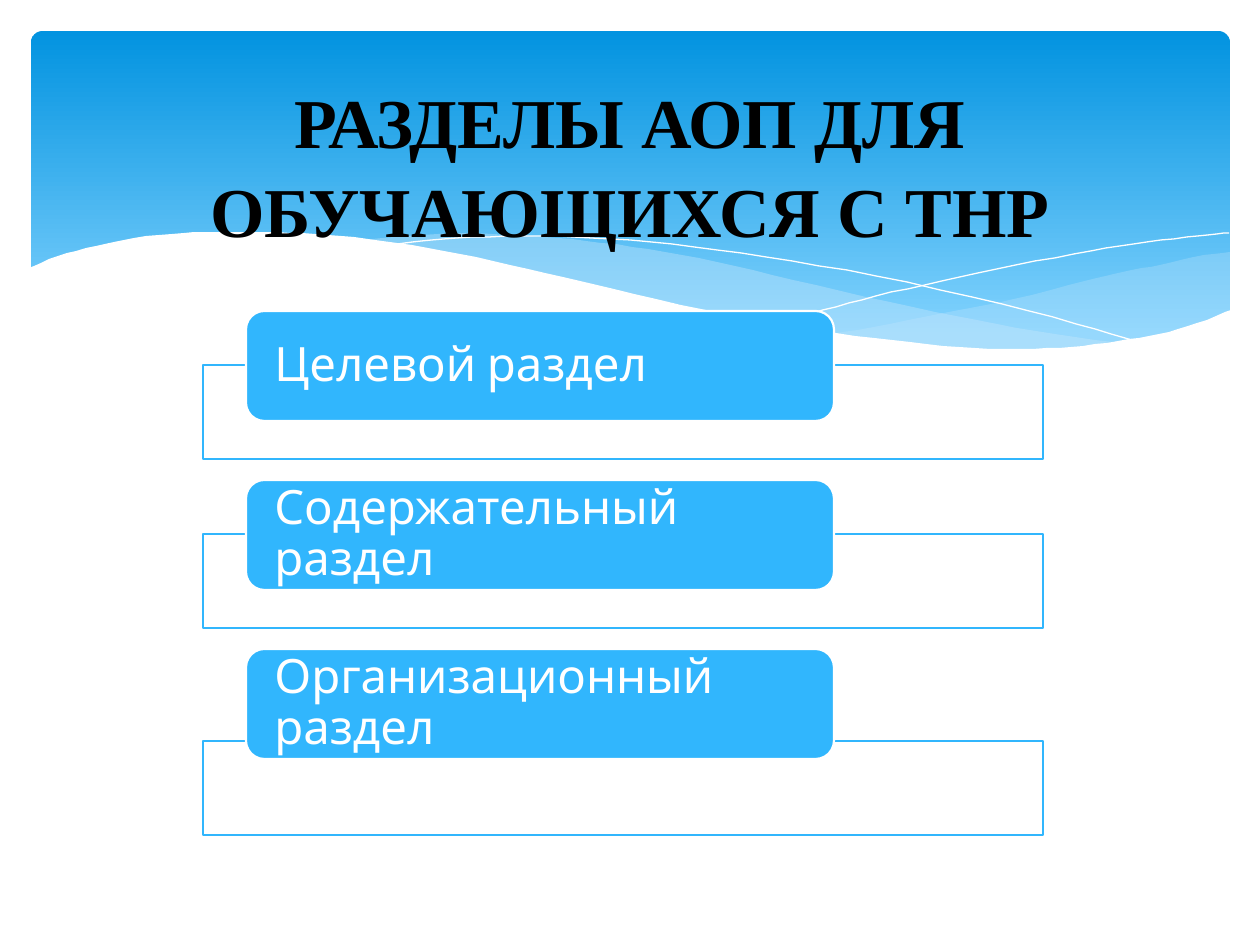
import dataclasses

import pptx
import pptx.dml.color
import pptx.enum.shapes
import pptx.enum.text
import pptx.oxml
import pptx.oxml.ns
import pptx.util

SCALE = 914400 / 126
SHAPES = pptx.enum.shapes.MSO_SHAPE


@dataclasses.dataclass(frozen=True)
class Theme:
    """Colours, fonts and type sizes of the slide."""
    sky_top: str = "0293E0"
    sky_bottom: str = "83D3FE"
    wave: str = "C6E7FC"
    accent: str = "31B6FD"
    white: str = "FFFFFF"
    black: str = "000000"
    title_font: str = "Times New Roman"
    body_font: str = "Cabin"
    title_size: int = 40
    body_size: int = 27
    line_width: float = 1.25


THEME = Theme()

RIGHT_WAVE = [
    [(1230, 252), (1194, 257), (1160, 265), (1123, 272), (1085, 281), (1014, 299),
     (949, 312), (890, 324), (833, 334)],
    [(833, 334), (888, 341), (939, 347), (984, 349), (1026, 350), (1076, 348),
     (1120, 343), (1160, 334), (1196, 324), (1230, 311)],
]
MIDDLE_WAVE = [
    [(1125, 344), (1055, 334), (977, 320), (890, 302), (793, 280), (717, 262), (648, 249),
     (586, 241), (529, 236), (455, 233), (394, 237), (360, 241)],
    [(360, 241), (431, 251), (509, 266), (566, 280), (668, 302), (757, 321), (838, 335),
     (910, 345), (974, 349), (1031, 350), (1080, 349), (1125, 344)],
]
FALLING_LINE = [
    [(389, 246), (413, 242), (457, 238), (524, 236), (591, 238), (672, 244), (766, 257),
     (876, 276), (1002, 304), (1095, 329), (1143, 343)],
]
RISING_LINE = [
    [(772, 324), (823, 310), (876, 296), (942, 281), (1016, 265), (1091, 251),
     (1147, 242), (1198, 236), (1229, 233)],
]
WHITE_WAVE = [
    [(1231, 310), (1197, 323), (1159, 334), (1118, 341), (1071, 347), (1019, 349),
     (959, 347), (892, 340), (816, 330), (730, 315), (634, 294), (563, 277), (493, 261),
     (428, 248), (368, 239), (315, 234), (266, 232), (223, 232), (184, 233), (134, 238),
     (96, 246), (58, 256), (29, 268)],
    [(29, 415), (1231, 415)],
]

SECTIONS = [
    ("Целевой раздел", 365),
    ("Содержательный раздел", 534),
    ("Организационный раздел", 741),
]
CARD_TOP, CARD_PITCH = 311, 169


def px(length):
    """Turn a length in px into EMU."""
    return pptx.util.Emu(round(length * SCALE))


def rgb(colour):
    """Return the colour object of a hex string."""
    return pptx.dml.color.RGBColor.from_string(colour)


def smooth(knots, steps=4):
    """Return points along a Catmull-Rom curve through the knots."""
    padded = [knots[0], *knots, knots[-1]]
    points = [knots[0]]
    for a, b, c, d in zip(padded, padded[1:], padded[2:], padded[3:]):
        for step in range(1, steps + 1):
            t = step / steps
            points.append(tuple(
                (2 * q + (r - p) * t + (2 * p - 5 * q + 4 * r - s) * t ** 2
                 + (3 * q - p - 3 * r + s) * t ** 3) / 2
                for p, q, r, s in zip(a, b, c, d)))
    return points


def paint(shape, fill=None, opacity=100, line=None, width=0):
    """Set fill, opacity and outline, and switch the shadow off."""
    shape.shadow.inherit = False
    if fill:
        shape.fill.solid()
        shape.fill.fore_color.rgb = rgb(fill)
        if opacity < 100:
            colour = shape.element.spPr.find(".//" + pptx.oxml.ns.qn("a:srgbClr"))
            alpha = colour.makeelement(pptx.oxml.ns.qn("a:alpha"), {"val": str(opacity * 1000)})
            colour.append(alpha)
    else:
        shape.fill.background()
    if line:
        shape.line.color.rgb = rgb(line)
        shape.line.width = pptx.util.Pt(width)
    else:
        shape.line.fill.background()


def add_box(page, kind, left, top, width, height):
    """Add a preset shape placed in px."""
    return page.shapes.add_shape(kind, px(left), px(top), px(width), px(height))


def add_wave(page, curves, close=True, **style):
    """Add an outline made of smooth curves joined end to end."""
    points = [point for curve in curves for point in smooth(curve)]
    builder = page.shapes.build_freeform(*points[0], scale=SCALE)
    builder.add_line_segments(points[1:], close=close)
    paint(builder.convert_to_shape(), **style)


def add_backdrop(page):
    """Add the blue gradient panel and the waves at its foot."""
    panel = add_box(page, SHAPES.ROUNDED_RECTANGLE, 31, 31, 1199, 340)
    panel.adjustments[0] = 0.034
    paint(panel)
    panel.fill.gradient()
    panel.fill.gradient_angle = 270
    stops = ((0, THEME.sky_top), (0.9, THEME.sky_bottom))
    for stop, (position, colour) in zip(panel.fill.gradient_stops, stops):
        stop.position = position
        stop.color.rgb = rgb(colour)
    add_wave(page, RIGHT_WAVE, fill=THEME.wave, opacity=29)
    add_wave(page, MIDDLE_WAVE, fill=THEME.wave, opacity=40)
    for curve in (FALLING_LINE, RISING_LINE):
        add_wave(page, curve, close=False, line=THEME.white)
    add_wave(page, WHITE_WAVE, fill=THEME.white)


def write(frame, text, font, size, colour, align, spacing, bold=False):
    """Write one formatted paragraph into a vertically centred frame."""
    frame.word_wrap = True
    frame.auto_size = pptx.enum.text.MSO_AUTO_SIZE.NONE
    frame.vertical_anchor = pptx.enum.text.MSO_ANCHOR.MIDDLE
    para = frame.paragraphs[0]
    para.alignment = align
    para.line_spacing = spacing
    span = para.add_run()
    span.text = text
    span.font.name = font
    span.font.size = pptx.util.Pt(size)
    span.font.bold = bold
    span.font.color.rgb = rgb(colour)


def add_title(page, text):
    """Fill the title placeholder and bring it in front of the backdrop."""
    title = page.shapes.title
    title.left, title.top, title.width, title.height = px(63), px(47), px(1134), px(356)
    title.text_frame.margin_top = 0
    title.text_frame.margin_bottom = px(124)
    write(title.text_frame, text, THEME.title_font, THEME.title_size, THEME.black,
          pptx.enum.text.PP_ALIGN.CENTER, 1.05, bold=True)
    title.element.getparent().append(title.element)


def add_section(page, text, frame_top, card_top):
    """Add an outlined frame with a rounded heading card over it."""
    frame = add_box(page, SHAPES.RECTANGLE, 203, frame_top, 840, 94)
    paint(frame, THEME.white, 90, THEME.accent, THEME.line_width)
    card = add_box(page, SHAPES.ROUNDED_RECTANGLE, 246, card_top, 588, 110)
    paint(card, THEME.accent, 100, THEME.white, THEME.line_width)
    box = card.text_frame
    box.margin_left = box.margin_right = px(23)
    box.margin_top = box.margin_bottom = 0
    write(box, text, THEME.body_font, THEME.body_size, THEME.white,
          pptx.enum.text.PP_ALIGN.LEFT, 0.9)


def main():
    """Build the slide and save it."""
    deck = pptx.Presentation()
    deck.slide_width, deck.slide_height = px(1260), px(945)
    page = deck.slides.add_slide(deck.slide_layouts[5])
    add_backdrop(page)
    add_title(page, "РАЗДЕЛЫ АОП ДЛЯ ОБУЧАЮЩИХСЯ С ТНР")
    for index, (text, frame_top) in enumerate(SECTIONS):
        add_section(page, text, frame_top, CARD_TOP + index * CARD_PITCH)
    deck.save("out.pptx")


if __name__ == "__main__":
    main()
